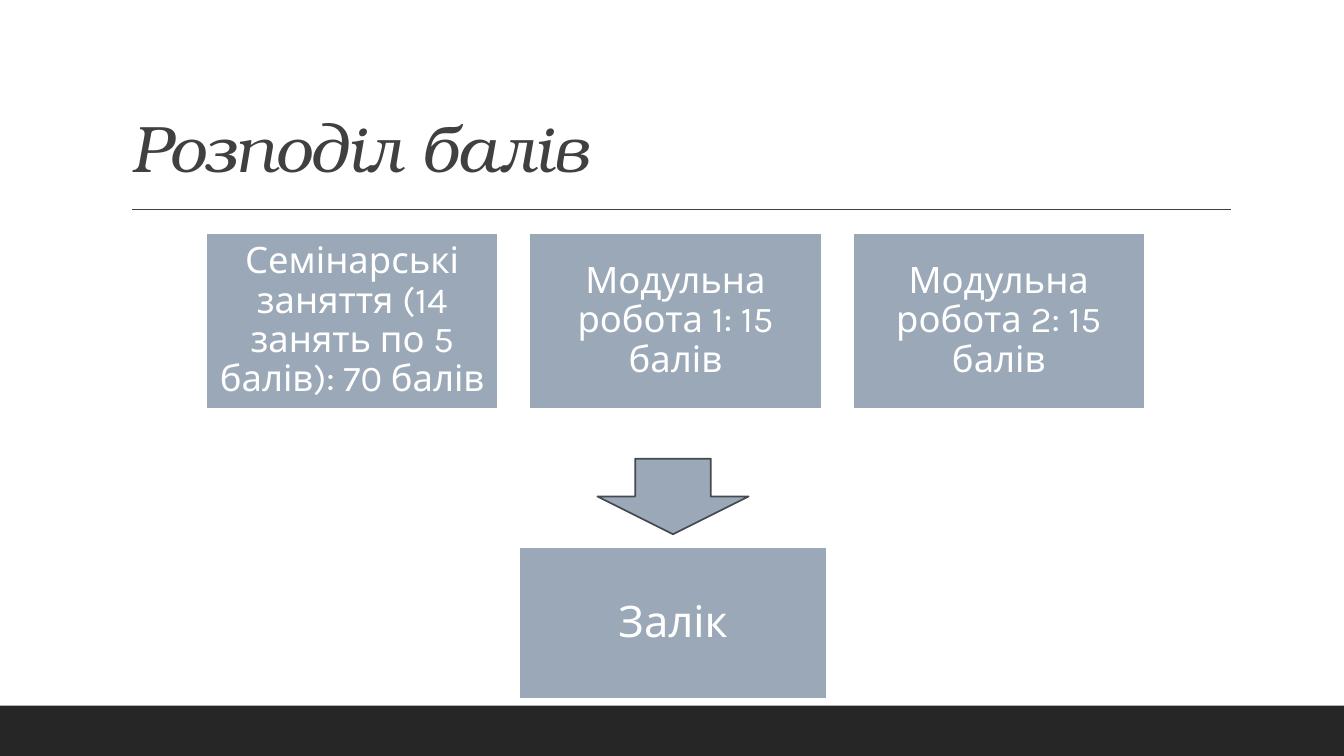
import pptx
import pptx.util
import pptx.dml.color
import pptx.enum.shapes
import pptx.enum.text
import pptx.oxml

Inches = pptx.util.Inches
Pt = pptx.util.Pt
SHAPES = pptx.enum.shapes.MSO_SHAPE

PANEL_FILL = "9BA8B7"
WHITE = "FFFFFF"
DARK_GREY = "404040"
SCORES = [
    "Семінарські заняття (14 занять по 5 балів): 70 балів",
    "Модульна робота 1: 15 балів",
    "Модульна робота 2: 15 балів",
]


def colour(value):
    return pptx.dml.color.RGBColor.from_string(value)


def add_block(page, preset, box, fill, line=None, line_width=0):
    """Add a filled preset shape in box (left, top, width, height)."""
    shape = page.shapes.add_shape(preset, *map(Inches, box))
    shape.shadow.inherit = False
    shape.fill.solid()
    shape.fill.fore_color.rgb = colour(fill)
    if line:
        shape.line.color.rgb = colour(line)
        shape.line.width = Pt(line_width)
    else:
        shape.line.fill.background()
    return shape


def add_panel(page, box, text, size, inset):
    panel = add_block(page, SHAPES.RECTANGLE, box, PANEL_FILL, WHITE, 2)
    frame = panel.text_frame
    frame.word_wrap = True
    frame.vertical_anchor = pptx.enum.text.MSO_ANCHOR.MIDDLE
    frame.margin_left = frame.margin_right = Inches(inset)
    frame.margin_top = frame.margin_bottom = Inches(inset)
    frame.text = text
    para = frame.paragraphs[0]
    para.alignment = pptx.enum.text.PP_ALIGN.CENTER
    para.line_spacing = 0.9
    font = para.runs[0].font
    font.name = "Karla"
    font.size = Pt(size)
    font.color.rgb = colour(WHITE)


def add_heading(page, box, text):
    left, top, width, height = box

    # Rule below the title
    rule_top = top + height + 0.18
    rule = page.shapes.add_connector(
        pptx.enum.shapes.MSO_CONNECTOR.STRAIGHT,
        Inches(left + 0.11), Inches(rule_top),
        Inches(left + width + 0.01), Inches(rule_top))
    rule.line.color.rgb = colour(DARK_GREY)
    rule.line.width = Pt(1)
    rule._element.spPr.append(pptx.oxml.parse_xml(
        '<a:effectLst xmlns:a="http://schemas.openxmlformats.org/drawingml/2006/main"/>'))

    # Title text
    title = page.shapes.title
    title.left, title.top, title.width, title.height = map(Inches, box)
    frame = title.text_frame
    frame.word_wrap = True
    frame.auto_size = pptx.enum.text.MSO_AUTO_SIZE.NONE
    frame.vertical_anchor = pptx.enum.text.MSO_ANCHOR.BOTTOM
    frame.text = text
    para = frame.paragraphs[0]
    para.alignment = pptx.enum.text.PP_ALIGN.LEFT
    para.line_spacing = 0.9
    span = para.runs[0]
    span.font.name = "TeX Gyre Bonum"
    span.font.size = Pt(47)
    span.font.italic = True
    span.font.color.rgb = colour(DARK_GREY)
    span._r.get_or_add_rPr().set("spc", "-50")


def add_score_row(page, box, scores, gap):
    """Share the width of box equally between the score panels."""
    left, top, width, height = box
    panel_width = (width - gap * (len(scores) - 1)) / len(scores)
    for index, score in enumerate(scores):
        panel_left = left + index * (panel_width + gap)
        add_panel(page, (panel_left, top, panel_width, height), score, 26, 0.11)


def add_result(page, box, text):
    """Stack the arrow and the result panel in box."""
    left, top, width, height = box
    arrow_width, arrow_height, gap = 1.5, 0.75, 0.12
    arrow_left = left + (width - arrow_width) / 2
    add_block(page, SHAPES.DOWN_ARROW, (arrow_left, top, arrow_width, arrow_height),
              PANEL_FILL, "444A50", 1.25)
    offset = arrow_height + gap
    add_panel(page, (left, top + offset, width, height - offset), text, 31, 0.13)


def main():
    deck = pptx.Presentation()
    deck.slide_width = Inches(13.33)
    deck.slide_height = Inches(7.5)
    page = deck.slides.add_slide(deck.slide_layouts[5])

    # Footer band
    add_block(page, SHAPES.RECTANGLE, (0, 7, 13.33, 0.5), "262626")

    add_heading(page, (1.2, 0.31, 11, 1.59), "Розподіл балів")
    add_score_row(page, (2.04, 2.31, 9.32, 1.75), SCORES, gap=0.3)
    add_result(page, (5.14, 4.55, 3.07, 2.39), "Залік")

    deck.save("out.pptx")


if __name__ == "__main__":
    main()
